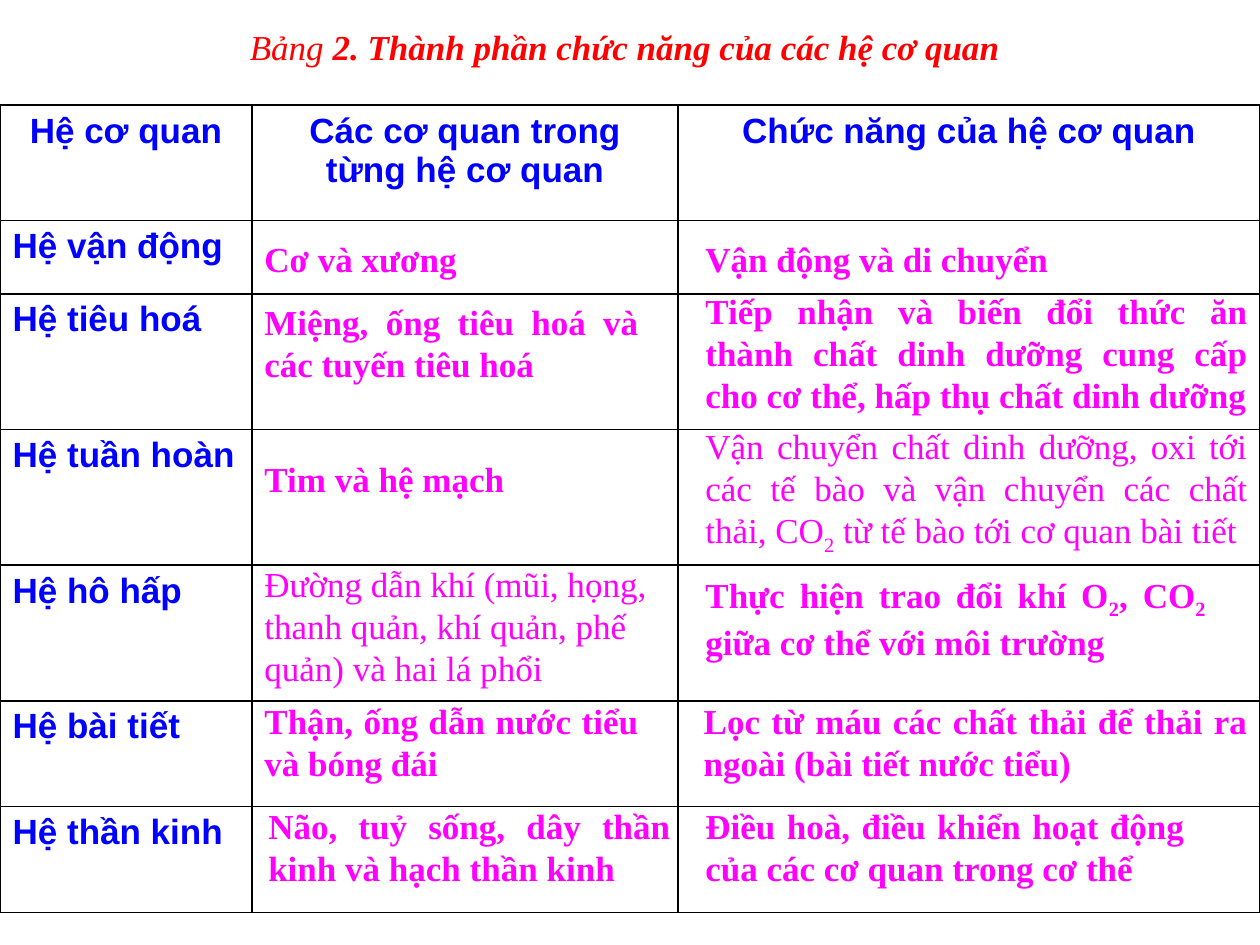
from lxml import etree
from pptx import Presentation
from pptx import util as u
from pptx.dml.color import RGBColor
from pptx.enum import text
from pptx.oxml import ns

BLACK = RGBColor(0, 0, 0)
BLUE = RGBColor(0, 0, 255)
RED = RGBColor(255, 0, 0)
MAGENTA = RGBColor(255, 0, 255)
SANS, SERIF = "Arial", "Times New Roman"
LEFT, CENTER, JUSTIFY = (
    text.PP_ALIGN.LEFT, text.PP_ALIGN.CENTER, text.PP_ALIGN.JUSTIFY)

COLUMNS = (144, 243.5, 332.5)
ROWS = (66, 42, 77.5, 77.5, 77.5, 60.5, 60.5)
HEADERS = ("Hệ cơ quan", "Các cơ quan trong từng hệ cơ quan",
           "Chức năng của hệ cơ quan")
SYSTEMS = ("Hệ vận động", "Hệ tiêu hoá", "Hệ tuần hoàn",
           "Hệ hô hấp", "Hệ bài tiết", "Hệ thần kinh")

ORGANS = (
    (144, 132, 230, 31, LEFT, True, ("Cơ và xương",)),
    (144, 168, 228, 55, JUSTIFY, True,
     ("Miệng, ống tiêu hoá và các tuyến tiêu hoá",)),
    (144, 258, 240, 31, JUSTIFY, True, ("Tim và hệ mạch",)),
    (144, 318, 243.5, 80, LEFT, False,
     ("Đường dẫn khí (mũi, họng, thanh quản, khí quản, phế quản) và hai lá phổi",)),
    (144, 396, 228, 55, JUSTIFY, True,
     ("Thận, ống dẫn nước tiểu và bóng đái",)),
    (146.25, 456, 244, 55, JUSTIFY, True,
     ("Não, tuỷ sống, dây thần kinh và hạch thần kinh",)),
)
FUNCTIONS = (
    (396, 132, 324, 31, JUSTIFY, True, ("Vận động và di chuyển",)),
    (396, 162, 324, 79, JUSTIFY, True,
     ("Tiếp nhận và biến đổi thức ăn thành chất dinh dưỡng cung cấp cho cơ thể, "
      "hấp thụ chất dinh dưỡng",)),
    (396, 239, 324, 79, JUSTIFY, False,
     ("Vận chuyển chất dinh dưỡng, oxi tới các tế bào và vận chuyển các chất thải, CO",
      "2", " từ tế bào tới cơ quan bài tiết")),
    (396, 324, 300, 55, JUSTIFY, True,
     ("Thực hiện trao đổi khí O", "2", ", CO", "2",
      " giữa cơ thể với môi trường")),
    (395, 396, 325, 55, JUSTIFY, True,
     ("Lọc từ máu các chất thải để thải ra ngoài (bài tiết nước tiểu)",)),
    (396, 456, 288, 55, JUSTIFY, True,
     ("Điều hoà, điều khiển hoạt động của các cơ quan trong cơ thể",)),
)


def add_span(para, words, font, color, bold=False, italic=False):
    span = para.add_run()
    span.text = words
    span.font.name = font
    span.font.size = u.Pt(20)
    span.font.bold = bold
    span.font.italic = italic
    span.font.color.rgb = color
    return span


def add_box(page, left, top, width, height, align):
    box = page.shapes.add_textbox(*map(u.Pt, (left, top, width, height)))
    box.text_frame.word_wrap = True
    box.text_frame.auto_size = text.MSO_AUTO_SIZE.SHAPE_TO_FIT_TEXT
    para = box.text_frame.paragraphs[0]
    para.alignment = align
    return para


def add_answer(page, left, top, width, height, align, bold, parts):
    para = add_box(page, left, top, width, height, align)
    for index, words in enumerate(parts):
        span = add_span(para, words, SERIF, MAGENTA, bold)
        if index % 2:
            span.font._element.set("baseline", "-25000")


def style_cell(cell):
    properties = cell._tc.get_or_add_tcPr()
    for side in ("lnL", "lnR", "lnT", "lnB"):
        line = etree.SubElement(properties, ns.qn(f"a:{side}"), w=str(u.Pt(1)))
        fill = etree.SubElement(line, ns.qn("a:solidFill"))
        etree.SubElement(fill, ns.qn("a:srgbClr"), val=str(BLACK))
    cell.fill.background()


def write_cell(cell, words, align, hanging):
    para = cell.text_frame.paragraphs[0]
    para.alignment = align
    if hanging:
        properties = para._p.get_or_add_pPr()
        properties.set("marL", str(u.Pt(27)))
        properties.set("indent", str(u.Pt(-27)))
    add_span(para, words, SANS, BLUE, True)


def add_system_table(page):
    frame = page.shapes.add_table(
        len(ROWS), len(COLUMNS), u.Pt(0), u.Pt(60),
        u.Pt(sum(COLUMNS)), u.Pt(sum(ROWS)))
    table = frame.table
    table.first_row = table.horz_banding = False
    for column, width in zip(table.columns, COLUMNS):
        column.width = u.Pt(width)
    for row, height in zip(table.rows, ROWS):
        row.height = u.Pt(height)
    for cell in table.iter_cells():
        style_cell(cell)
    for index, words in enumerate(HEADERS):
        write_cell(table.cell(0, index), words, CENTER, index != 1)
    for index, words in enumerate(SYSTEMS, 1):
        write_cell(table.cell(index, 0), words, JUSTIFY, True)


def add_title(page):
    para = add_box(page, 42, 11, 630, 31, CENTER)
    add_span(para, "Bảng", SERIF, RED, italic=True)
    add_span(para, " 2. Thành phần chức năng của các hệ cơ quan",
             SERIF, RED, True, True)


def main():
    deck = Presentation()
    deck.slide_width, deck.slide_height = u.Pt(720), u.Pt(540)
    page = deck.slides.add_slide(deck.slide_layouts[6])
    add_system_table(page)
    add_title(page)
    for answer in ORGANS + FUNCTIONS:
        add_answer(page, *answer)
    deck.save("out.pptx")


if __name__ == "__main__":
    main()
